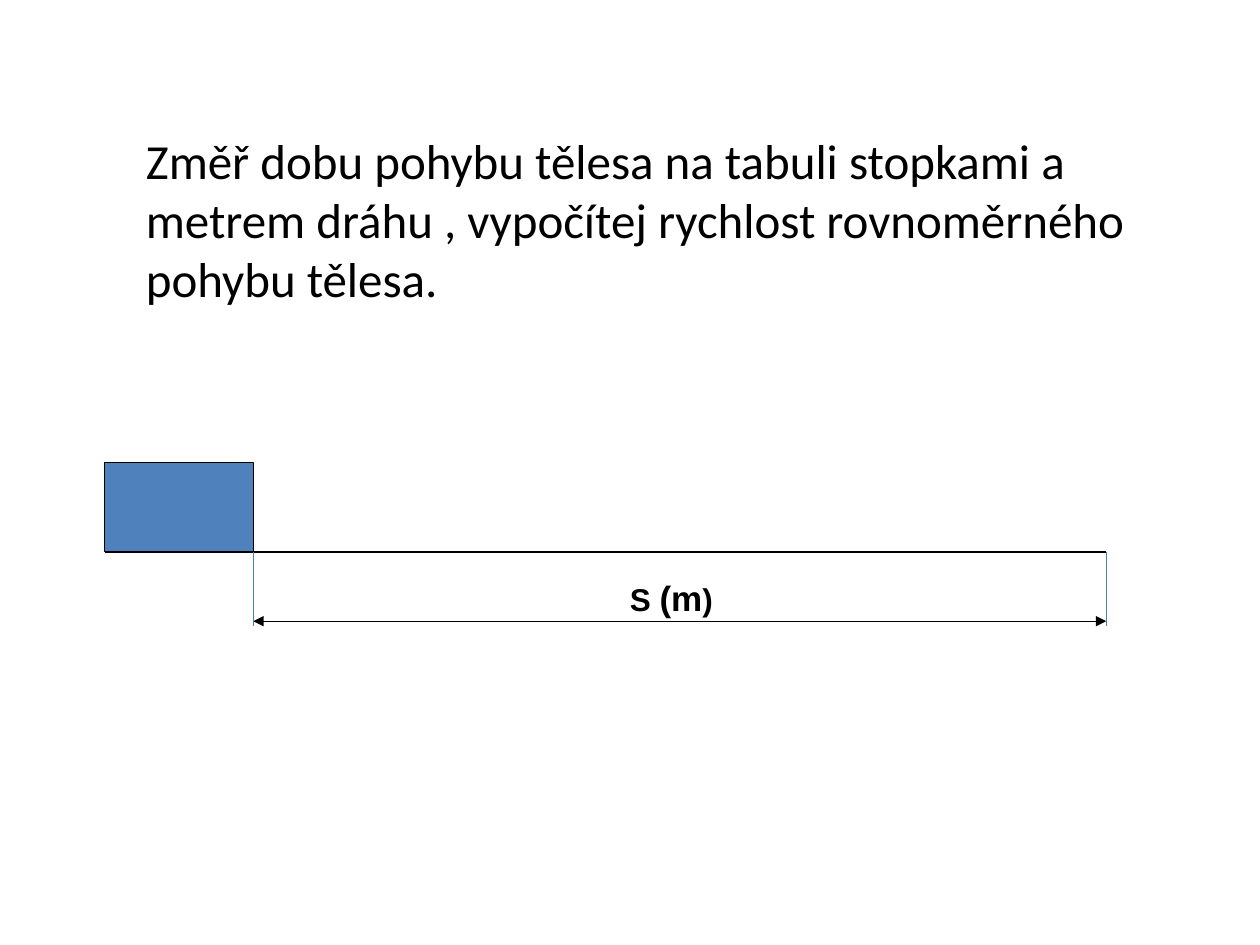
from lxml.etree import SubElement
from pptx import Presentation
from pptx.dml.color import RGBColor
from pptx.enum.shapes import MSO_CONNECTOR, MSO_SHAPE
from pptx.enum.text import MSO_AUTO_SIZE
from pptx.oxml.ns import qn
from pptx.util import Inches, Pt

BLACK = RGBColor(0x00, 0x00, 0x00)
BODY_BLUE = RGBColor(0x4F, 0x81, 0xBD)
MARK_BLUE = RGBColor(0x4B, 0x7E, 0xBC)


def add_line(slide, start, end, color=BLACK, arrows=False):
    connector = slide.shapes.add_connector(
        MSO_CONNECTOR.STRAIGHT, *map(Inches, start + end))
    connector.line.color.rgb = color
    connector.line.width = Pt(0.75)
    if arrows:
        line = connector.line._get_or_add_ln()
        for tag in ("a:headEnd", "a:tailEnd"):
            SubElement(line, qn(tag), type="triangle")
    SubElement(connector._element.spPr, qn("a:effectLst"))
    return connector


def add_text(slide, left, top, width, height, runs, font_name, bold=False, wrap=True):
    """Add one paragraph made of (text, point size) runs."""
    box = slide.shapes.add_textbox(*map(Inches, (left, top, width, height)))
    frame = box.text_frame
    frame.word_wrap = wrap
    frame.auto_size = MSO_AUTO_SIZE.SHAPE_TO_FIT_TEXT
    for text, size in runs:
        run = frame.paragraphs[0].add_run()
        run.text = text
        run.font.name = font_name
        run.font.size = Pt(size)
        run.font.bold = bold
        run.font.color.rgb = BLACK


def add_task(slide, left, top, width, height):
    task = ("Změř dobu pohybu tělesa na tabuli stopkami a metrem dráhu , "
            "vypočítej rychlost rovnoměrného pohybu tělesa.")
    add_text(slide, left, top, width, height, [(task, 28)], "Calibri")


def add_motion_diagram(slide, left, top, width, height):
    """Draw a body on a track with the distance travelled marked below it."""
    body_width, body_height = 1.18, 0.71
    start, end = left + body_width, left + width
    track, bottom = top + body_height, top + height
    dimension = bottom - 0.04

    body = slide.shapes.add_shape(
        MSO_SHAPE.RECTANGLE, *map(Inches, (left, top, body_width, body_height)))
    body.shadow.inherit = False
    body.fill.solid()
    body.fill.fore_color.rgb = BODY_BLUE
    body.line.color.rgb = BLACK
    body.line.width = Pt(0.75)

    add_line(slide, (left, track), (end, track))
    add_line(slide, (start, dimension), (end, dimension), arrows=True)
    add_text(slide, left + 4.07, track + 0.15, 0.86, 0.43,
             [("S ", 18), ("(m", 20), (")", 18)], "Arial", bold=True, wrap=False)
    for mark in (start, end):
        add_line(slide, (mark, track), (mark, bottom), MARK_BLUE)


def main():
    presentation = Presentation()
    presentation.slide_width = Inches(10)
    presentation.slide_height = Inches(7.5)
    slide = presentation.slides.add_slide(presentation.slide_layouts[6])
    add_motion_diagram(slide, 0.83, 3.67, 7.95, 1.3)
    add_task(slide, 1.06, 0.99, 8.23, 1.51)
    presentation.save("out.pptx")


if __name__ == "__main__":
    main()
